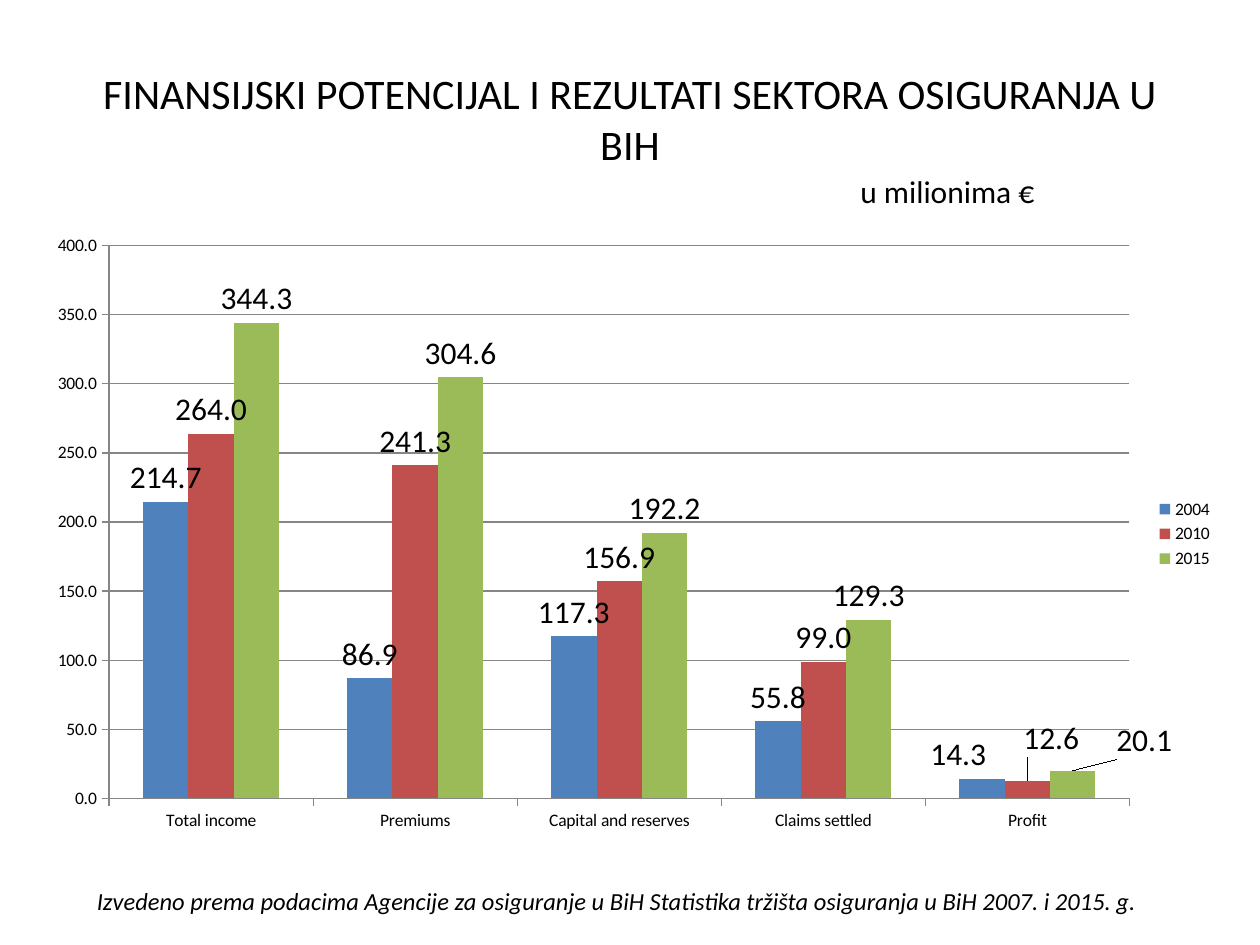
from lxml.etree import SubElement
from pptx import Presentation
from pptx.chart.data import CategoryChartData
from pptx.dml.color import RGBColor
from pptx.enum.chart import (XL_CHART_TYPE, XL_LABEL_POSITION,
                             XL_LEGEND_POSITION, XL_TICK_MARK)
from pptx.enum.text import MSO_ANCHOR, PP_ALIGN
from pptx.oxml.ns import qn
from pptx.util import Inches, Pt

COLORS = {"text": "000000", "line": "868686",
          "2004": "4F81BD", "2010": "C0504D", "2015": "9BBB59"}
GROUPS = ["Total income", "Premiums", "Capital and reserves",
          "Claims settled", "Profit"]
SALES = {"2004": [214.7, 86.9, 117.3, 55.8, 14.3],
         "2010": [264.0, 241.3, 156.9, 99.0, 12.6],
         "2015": [344.3, 304.6, 192.2, 129.3, 20.1]}
# Shift of each year's last label, as shares of the chart
SHIFTS = {"2004": (-0.02, 0), "2010": (0.02, -0.03), "2015": (0.06, -0.01)}


def color(name):
    return RGBColor.from_string(COLORS[name])


def layout(owner, spot, **parts):
    """Give a chart element a manual layout as its child number spot."""
    for old in owner.findall(qn("c:layout")):
        owner.remove(old)
    node = SubElement(owner, qn("c:layout"))
    manual = SubElement(node, qn("c:manualLayout"))
    for tag, val in parts.items():
        SubElement(manual, qn("c:" + tag)).set("val", str(val))
    owner.insert(spot, node)


class Deck:
    """Holds the font, the slide size and the current slide."""

    def __init__(self, wide, high, font):
        self.prs = Presentation()
        self.prs.slide_width, self.prs.slide_height = Inches(wide), Inches(high)
        self.font = font
        self.slide = self.prs.slides.add_slide(self.prs.slide_layouts[5])

    def box(self, x, y, w, h):
        """Turn shares of the slide into lengths."""
        wide, high = self.prs.slide_width, self.prs.slide_height
        return [int(n) for n in (x * wide, y * high, w * wide, h * high)]

    def style(self, font, size, italic=False):
        font.name, font.size, font.italic = self.font, Pt(size), italic
        font.color.rgb = color("text")

    def fill(self, frame, text, size, italic=False):
        frame.word_wrap = True
        run = frame.paragraphs[0].add_run()
        run.text = text
        self.style(run.font, size, italic)

    def title(self, text, area, size):
        shape = self.slide.shapes.title
        shape.left, shape.top, shape.width, shape.height = self.box(*area)
        self.fill(shape.text_frame, text, size)
        shape.text_frame.vertical_anchor = MSO_ANCHOR.MIDDLE
        shape.text_frame.paragraphs[0].alignment = PP_ALIGN.CENTER

    def text(self, text, area, size, italic=False):
        shape = self.slide.shapes.add_textbox(*self.box(*area))
        self.fill(shape.text_frame, text, size, italic)

    def chart(self, area, inner):
        data = CategoryChartData(number_format="0.0")
        data.categories = GROUPS
        for year, vals in SALES.items():
            data.add_series(year, vals)
        chart = self.slide.shapes.add_chart(
            XL_CHART_TYPE.COLUMN_CLUSTERED, *self.box(*area), data).chart
        self.style(chart.font, 10)
        chart.has_title = False
        chart.has_legend = True
        chart.legend.position = XL_LEGEND_POSITION.RIGHT
        chart.legend.include_in_layout = False
        for axis in (chart.category_axis, chart.value_axis):
            axis.major_tick_mark = XL_TICK_MARK.OUTSIDE
            axis.format.line.color.rgb = color("line")
        axis = chart.value_axis
        axis.minimum_scale, axis.maximum_scale, axis.major_unit = 0, 400, 50
        axis.major_gridlines.format.line.color.rgb = color("line")
        axis.tick_labels.number_format = "0.0"
        axis.tick_labels.number_format_is_linked = False
        plot = chart.plots[0]
        plot.vary_by_categories = False
        plot.gap_width, plot.overlap = 150, 0
        for bars in plot.series:
            self.bars(bars)
        x, y, w, h = inner
        layout(chart.element.find(".//" + qn("c:plotArea")), 0,
               layoutTarget="inner", xMode="edge", yMode="edge",
               x=x, y=y, w=w, h=h)

    def bars(self, bars):
        """Color one year's bars and place their labels."""
        bars.format.fill.solid()
        bars.format.fill.fore_color.rgb = color(bars.name)
        labels = bars.data_labels
        labels.show_value = True
        labels.number_format, labels.number_format_is_linked = "0.0", False
        labels.position = XL_LABEL_POSITION.OUTSIDE_END
        self.style(labels.font, 18)
        last = bars.points[len(GROUPS) - 1].data_label
        self.style(last.font, 18)
        last.position = XL_LABEL_POSITION.OUTSIDE_END
        x, y = SHIFTS[bars.name]
        layout(bars.format.element.find(".//" + qn("c:dLbl"))
               if hasattr(bars.format, "element")
               else plot_label(bars), 1, x=x, y=y)

    def save(self):
        self.prs.save("out.pptx")


def plot_label(bars):
    return bars.data_labels._element.find(qn("c:dLbl"))


def main():
    deck = Deck(10, 7.5, "Calibri")
    deck.title("FINANSIJSKI POTENCIJAL I REZULTATI SEKTORA OSIGURANJA U BIH",
               (0.05, 0.04, 0.9, 0.17), 24)
    deck.chart((0.028, 0.237, 0.945, 0.656), (0.062, 0.035, 0.857, 0.892))
    deck.text("u milionima €", (0.673, 0.175, 0.181, 0.053), 18)
    deck.text("Izvedeno prema podacima Agencije za osiguranje u BiH Statistika "
              "tržišta osiguranja u BiH 2007. i 2015. g.",
              (0.067, 0.931, 0.858, 0.06), 14, italic=True)
    deck.save()


if __name__ == "__main__":
    main()
